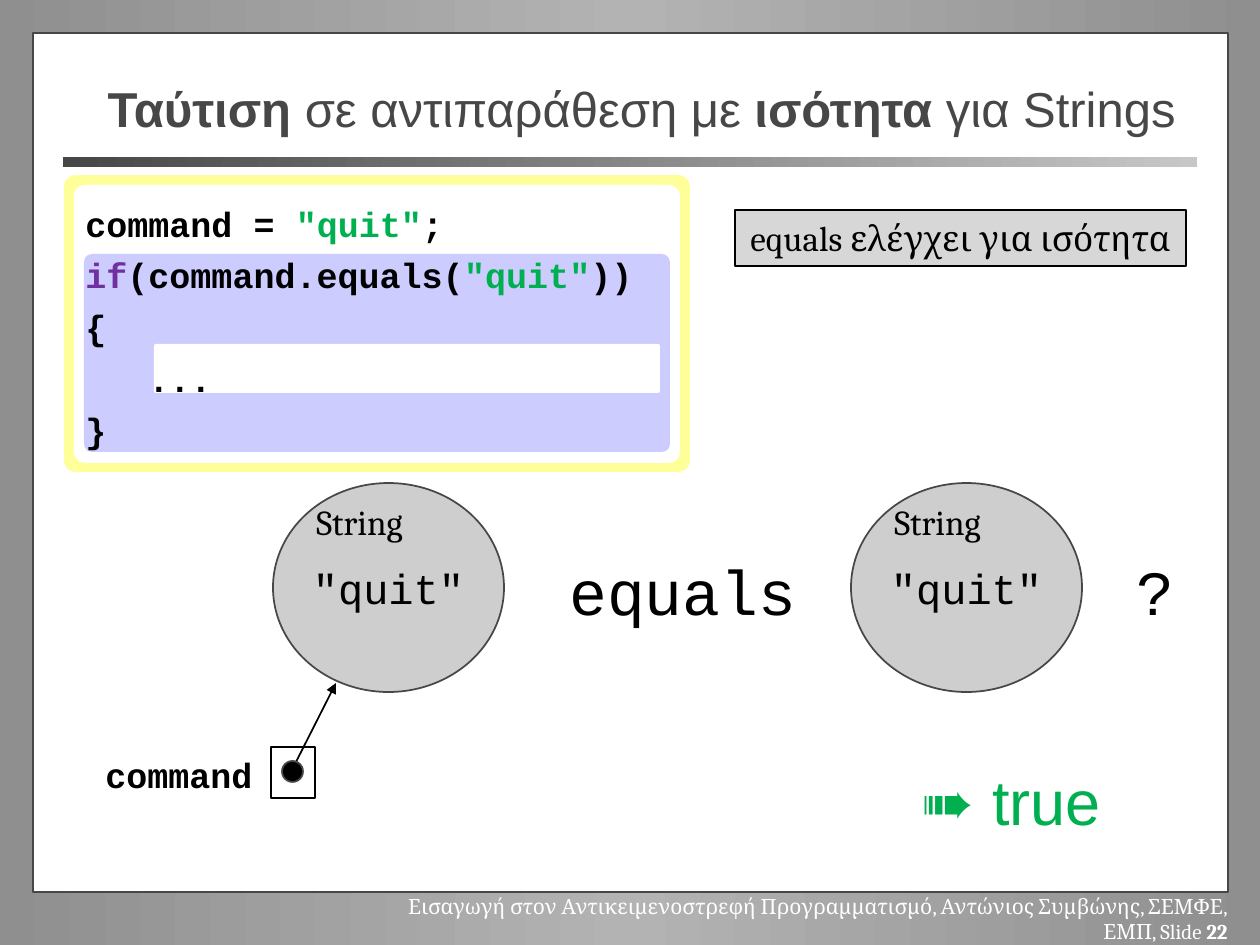
from copy import deepcopy
from dataclasses import dataclass

from lxml.etree import SubElement
from pptx import Presentation
from pptx.dml.color import RGBColor
from pptx.enum.shapes import MSO_CONNECTOR, MSO_SHAPE
from pptx.enum.text import MSO_ANCHOR, MSO_AUTO_SIZE, PP_ALIGN
from pptx.oxml.ns import qn
from pptx.util import Emu, Pt

MONO, SERIF, SANS = "Courier New", "Cambria", "Arial"
BLACK, WHITE, DARK = "000000", "FFFFFF", "474747"
GREEN, PURPLE = "00B050", "7030A0"


@dataclass
class Box:
    x: int
    y: int
    w: int
    h: int


@dataclass
class Run:
    text: str
    color: str = BLACK
    bold: bool = False


@dataclass
class Style:
    font: str
    size: int
    gap: float = 0
    align: PP_ALIGN = PP_ALIGN.LEFT


def px(n: int) -> Emu:
    """One inch is 126 px."""
    return Emu(round(n * 914400 / 126))


def rgb(code: str) -> RGBColor:
    return RGBColor.from_string(code)


def place(box: Box) -> tuple:
    return px(box.x), px(box.y), px(box.w), px(box.h)


def shade(fill, codes: list[str]) -> None:
    """Even left-to-right gradient through the given colours."""
    fill.gradient()
    fill.gradient_angle = 0
    first = fill.gradient_stops[0]._gs
    for _ in codes[2:]:
        first.addnext(deepcopy(first))
    for i, (stop, code) in enumerate(zip(fill.gradient_stops, codes)):
        stop.color.rgb = rgb(code)
        stop.position = i / (len(codes) - 1)


def draw(shapes, kind: MSO_SHAPE, box: Box, fill: str = "", line: str = "", adj: float = 0):
    shape = shapes.add_shape(kind, *place(box))
    shape.shadow.inherit = False
    if fill:
        shape.fill.solid()
        shape.fill.fore_color.rgb = rgb(fill)
    else:
        shape.fill.background()
    if line:
        shape.line.color.rgb = rgb(line)
        shape.line.width = Pt(1)
    else:
        shape.line.fill.background()
    if adj:
        shape.adjustments[0] = adj
    return shape


def write(frame, style: Style, rows: list[list[Run]], wrap: bool = False) -> None:
    frame.word_wrap = wrap
    for i, row in enumerate(rows):
        para = frame.add_paragraph() if i else frame.paragraphs[0]
        para.alignment = style.align
        para.space_before = Pt(style.gap)
        for part in row:
            run = para.add_run()
            run.text = part.text
            run.font.name = style.font
            run.font.size = Pt(style.size)
            run.font.bold = part.bold
            run.font.color.rgb = rgb(part.color)


def label(shapes, box: Box, style: Style, rows: list[list[Run]], wrap: bool = False):
    text = shapes.add_textbox(*place(box))
    write(text.text_frame, style, rows, wrap)
    return text


def string(shapes, x: int, y: int) -> None:
    """A String object: a circle with its type and value."""
    group = shapes.add_group_shape().shapes
    disc = draw(group, MSO_SHAPE.OVAL, Box(x, y, 231, 209), "CECECE", DARK)
    disc.text_frame.vertical_anchor = MSO_ANCHOR.MIDDLE
    write(disc.text_frame, Style(MONO, 24, 0, PP_ALIGN.CENTER), [[Run('"quit"')]])
    label(group, Box(x + 31, y + 11, 116, 54), Style(SERIF, 20, 4), [[Run("String")]], True)


def arrow(shapes, x1: int, y1: int, x2: int, y2: int) -> None:
    link = shapes.add_connector(MSO_CONNECTOR.STRAIGHT, px(x1), px(y1), px(x2), px(y2))
    link.line.color.rgb = rgb(BLACK)
    link.line.width = Pt(1)
    SubElement(link.line._get_or_add_ln(), qn("a:tailEnd"), type="triangle")
    SubElement(link._element.spPr, qn("a:effectLst"))


def main() -> None:
    deck = Presentation()
    deck.slide_width, deck.slide_height = px(1260), px(945)
    slide = deck.slides.add_slide(deck.slide_layouts[5])
    shapes = slide.shapes

    # Page frame, rule and footer
    shade(slide.background.fill, ["8F8F8F", "B3B3B3", "8F8F8F"])
    draw(shapes, MSO_SHAPE.RECTANGLE, Box(33, 33, 1195, 859), WHITE, DARK)
    rule = draw(shapes, MSO_SHAPE.RECTANGLE, Box(63, 157, 1134, 10))
    shade(rule.fill, [DARK, "C7C7C7"])
    label(shapes, Box(358, 887, 882, 38), Style(SERIF, 12, 0, PP_ALIGN.RIGHT), [[
        Run("Εισαγωγή στον Αντικειμενοστρεφή Προγραμματισμό, "
            "Αντώνιος Συμβώνης, ΣΕΜΦΕ, ΕΜΠ, Slide ", WHITE),
        Run("22", WHITE, True)]], True)

    # Title, raised above the page frame
    title = shapes.title
    title.left, title.top, title.width, title.height = place(Box(95, 69, 1102, 78))
    title.text_frame.auto_size = MSO_AUTO_SIZE.NONE
    title.text_frame.vertical_anchor = MSO_ANCHOR.MIDDLE
    write(title.text_frame, Style(SANS, 28), [[
        Run("Ταύτιση", DARK, True), Run(" σε αντιπαράθεση με ", DARK),
        Run("ισότητα ", DARK, True), Run("για Strings", DARK)]], True)
    shapes._spTree.append(title._element)

    # Code block
    for box, fill in [
        (Box(64, 175, 626, 297), "FFFF99"),
        (Box(74, 185, 606, 278), WHITE),
        (Box(84, 254, 586, 198), "CCCCFF"),
        (Box(154, 344, 506, 49), WHITE),
    ]:
        draw(shapes, MSO_SHAPE.ROUNDED_RECTANGLE, box, fill, adj=0.04)
    code = label(shapes, Box(73, 196, 577, 258), Style(MONO, 20, 5.5), [
        [Run("command = ", bold=True), Run('"quit"', GREEN, True), Run(";", bold=True)],
        [Run("if", PURPLE, True), Run("(command.equals(", bold=True),
         Run('"quit"', GREEN, True), Run("))", bold=True)],
        [Run("{", bold=True)],
        [Run("...", bold=True)],
        [Run("}", bold=True)],
    ])
    body = code.text_frame.paragraphs[3]._p.get_or_add_pPr()
    body.set("marL", str(px(63)))
    body.set("indent", "0")

    # Comparison of the two strings
    for x in (273, 851):
        string(shapes, x, 483)
    big = Style(MONO, 36, 7)
    label(shapes, Box(557, 546, 252, 88), big, [[Run("equals")]])
    label(shapes, Box(1124, 546, 63, 88), big, [[Run("?")]])
    label(shapes, Box(892, 756, 231, 88), Style(SANS, 36, 7),
          [[Run(" "), Run("➠ true", GREEN)]])

    # Remark
    note = draw(shapes, MSO_SHAPE.RECTANGLE, Box(735, 210, 451, 56), "D7D7D7", BLACK)
    note.text_frame.vertical_anchor = MSO_ANCHOR.TOP
    write(note.text_frame, Style(SERIF, 20, 4, PP_ALIGN.CENTER),
          [[Run("equals ελέγχει για ισότητα")]], True)

    # Variable pointing at the first string
    arrow(shapes, 294, 766, 336, 683)
    draw(shapes, MSO_SHAPE.RECTANGLE, Box(271, 747, 44, 51), line=BLACK)
    draw(shapes, MSO_SHAPE.OVAL, Box(282, 761, 21, 21), BLACK, DARK)
    label(shapes, Box(93, 747, 174, 55), Style(MONO, 20, 4), [[Run("command", bold=True)]])

    deck.save("out.pptx")


if __name__ == "__main__":
    main()
